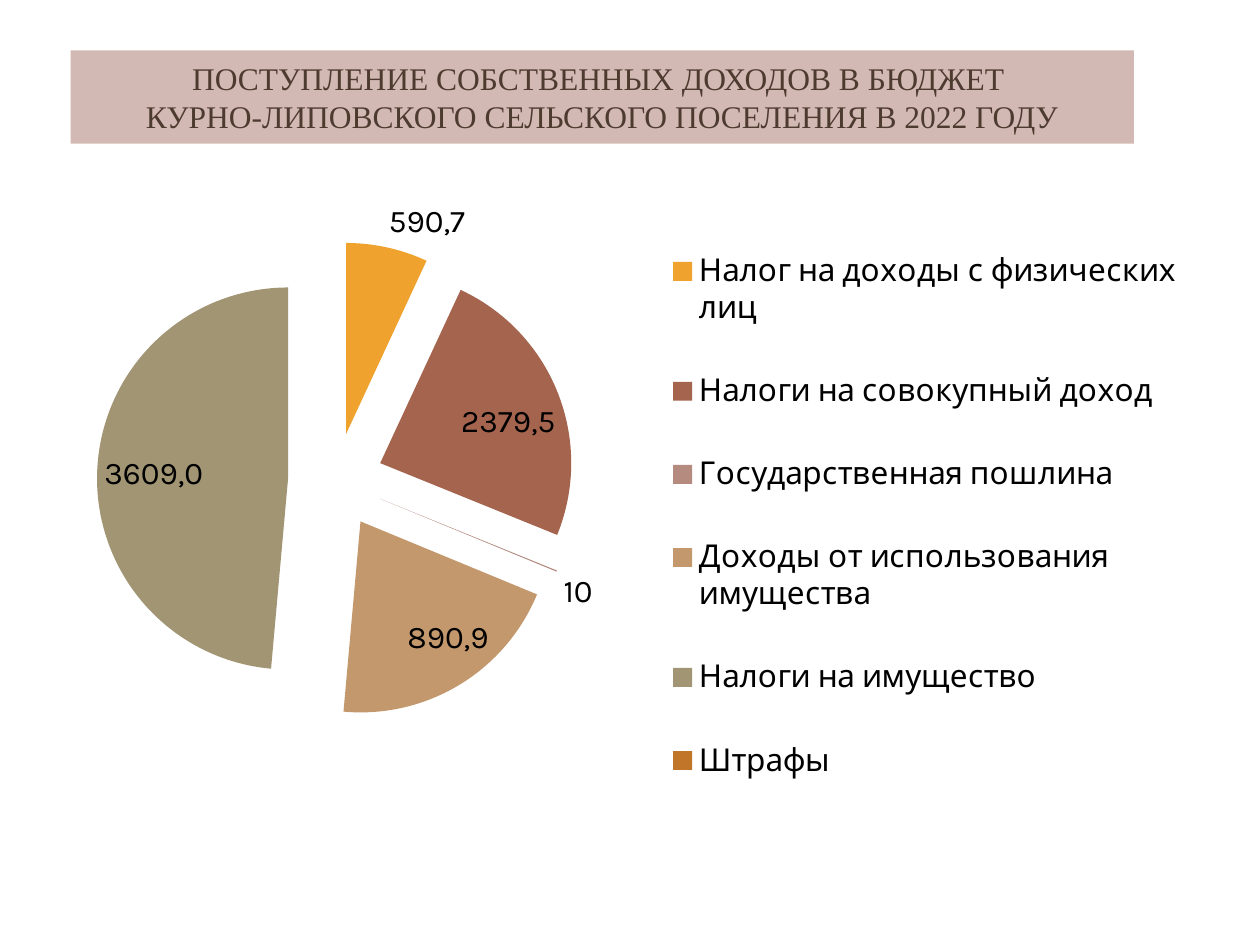
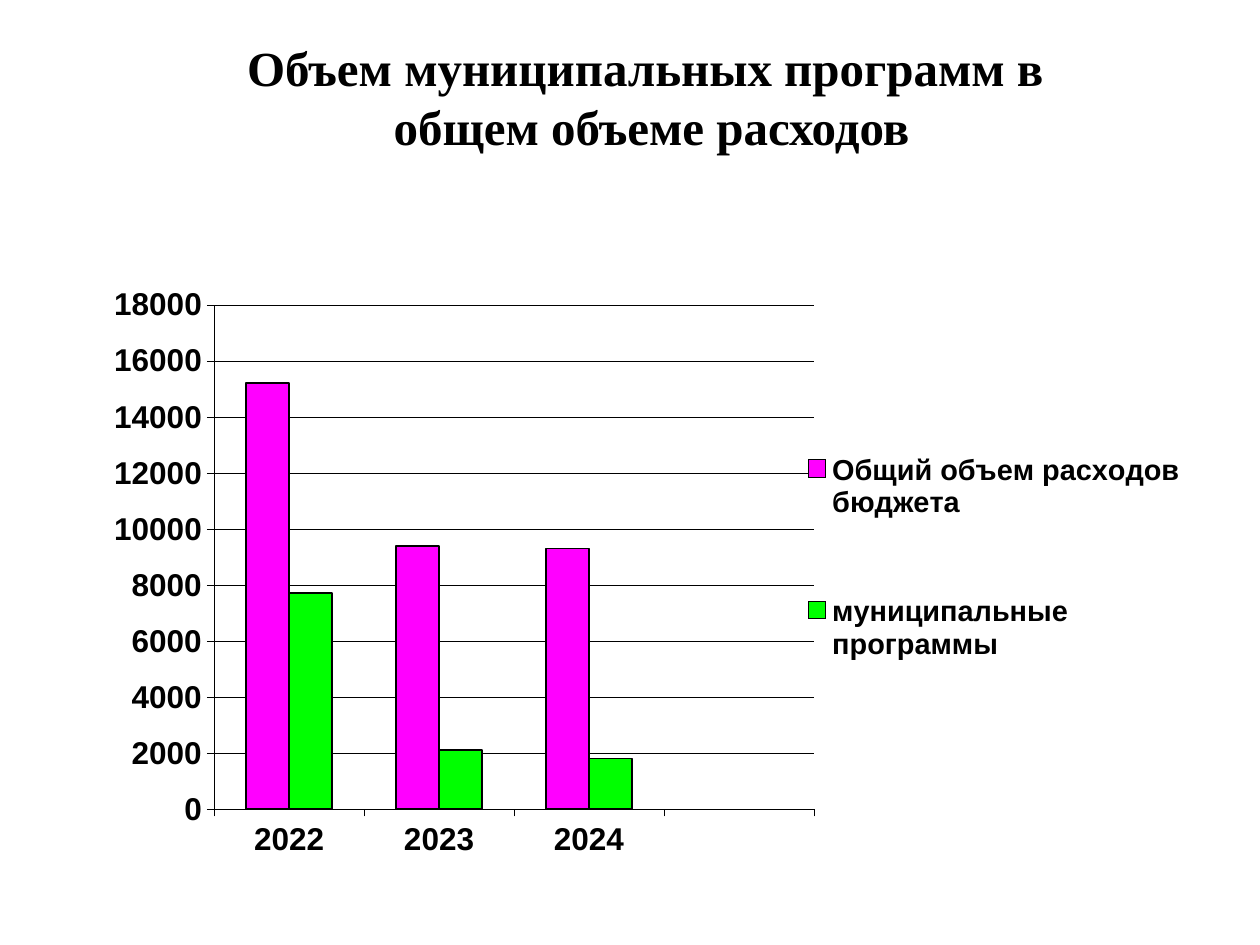
from dataclasses import dataclass

from lxml.etree import SubElement
from pptx import Presentation
from pptx.chart.chart import Chart
from pptx.chart.data import CategoryChartData
from pptx.dml.color import RGBColor
from pptx.enum.chart import (
    XL_CHART_TYPE,
    XL_LABEL_POSITION,
    XL_LEGEND_POSITION,
    XL_TICK_LABEL_POSITION,
    XL_TICK_MARK,
)
from pptx.enum.text import MSO_ANCHOR, MSO_AUTO_SIZE, PP_ALIGN
from pptx.oxml.ns import qn
from pptx.util import Inches, Pt

BLACK = "000000"
TITLE_FONT = "Times New Roman"
TITLE_ONLY = 5


@dataclass
class Area:
    """Left, top, width and height in inches."""
    left: float
    top: float
    width: float
    height: float

    def lengths(self) -> list:
        return [Inches(v) for v in (self.left, self.top, self.width, self.height)]

    def fractions_of(self, whole: "Area") -> dict:
        return {"x": self.left / whole.width, "y": self.top / whole.height,
                "w": self.width / whole.width, "h": self.height / whole.height}


@dataclass
class Tax:
    name: str
    amount: float
    hue: str
    label: str = ""


@dataclass
class Expense:
    name: str
    amounts: tuple
    hue: str


# Slide content
TAXES = [
    Tax("Налог на доходы с физических лиц", 480, "F0A22E", "590,7"),
    Tax("Налоги на совокупный доход", 1680, "A5644E", "2379,5"),
    Tax("Государственная пошлина ", 7, "B58B80", "10"),
    Tax("Доходы от использования имущества", 1400, "C3986D", "890,9"),
    Tax("Налоги на имущество", 3370, "A19574", "3609,0"),
    Tax("Штрафы", 0, "C17529"),
]
YEARS = ["2022", "2023", "2024", ""]
EXPENSES = [
    Expense("Общий объем расходов бюджета", (15200, 9400, 9300, None), "FF00FF"),
    Expense("муниципальные программы", (7700, 2100, 1800, None), "00FF00"),
]


# Shared formatting
def color(value: str) -> RGBColor:
    return RGBColor.from_string(value)


def set_font(font, name: str, size: float, hue: str = BLACK, bold: bool = False) -> None:
    font.name, font.size, font.bold = name, Pt(size), bold
    font.color.rgb = color(hue)


def set_line(line, width: float) -> None:
    line.color.rgb = color(BLACK)
    line.width = Pt(width)


def write_text(frame, text: str, *, font: str, size: float, hue: str = BLACK,
               bold: bool = False, align=PP_ALIGN.CENTER) -> None:
    """Write text; a newline starts a paragraph, a vertical tab breaks a line."""
    frame.text = text
    for para in frame.paragraphs:
        para.alignment = align
        for span in para.runs:
            set_font(span.font, font, size, hue, bold)


def add_titled_page(deck, text: str, area: Area, *, anchor, fill: str = "", **style):
    page = deck.slides.add_slide(deck.slide_layouts[TITLE_ONLY])
    box = page.shapes.title
    box.left, box.top, box.width, box.height = area.lengths()
    if fill:
        box.fill.solid()
        box.fill.fore_color.rgb = color(fill)
    frame = box.text_frame
    frame.word_wrap = True
    frame.auto_size = MSO_AUTO_SIZE.NONE
    frame.vertical_anchor = anchor
    write_text(frame, text, font=TITLE_FONT, **style)
    return page


# Shared chart parts
def set_layout(chart: Chart, part: str, fractions: dict) -> None:
    """Place the plot area or the legend inside the chart."""
    holder = chart.element.xpath(f".//c:{part}")[0]
    for previous in holder.findall(qn("c:layout")):
        holder.remove(previous)
    layout = SubElement(holder, qn("c:layout"))
    manual = SubElement(layout, qn("c:manualLayout"))
    settings = {"xMode": "edge", "yMode": "edge", **fractions}
    if part == "plotArea":
        settings = {"layoutTarget": "inner", **settings}
    for tag, value in settings.items():
        SubElement(manual, qn(f"c:{tag}")).set("val", str(value))
    holder.insert(1 if part == "legend" else 0, layout)


def add_chart(page, kind, data: CategoryChartData, area: Area, plot: Area,
              legend: Area, font: str, bold: bool = False) -> Chart:
    """Add a chart; plot and legend are measured from its top left corner."""
    chart = page.shapes.add_chart(kind, *area.lengths(), data).chart
    chart.has_title = False
    set_font(chart.font, font, 18, bold=bold)
    chart.has_legend = True
    chart.legend.position = XL_LEGEND_POSITION.RIGHT
    chart.legend.include_in_layout = False
    set_layout(chart, "plotArea", plot.fractions_of(area))
    set_layout(chart, "legend", legend.fractions_of(area))
    return chart


# Income slide: exploded pie
def explode(chart: Chart, percent: int) -> None:
    pie_series = chart.element.xpath(".//c:ser")[0]
    explosion = SubElement(pie_series, qn("c:explosion"))
    explosion.set("val", str(percent))
    pie_series.find(qn("c:dPt")).addprevious(explosion)


def drop_label(chart: Chart, index: int) -> None:
    """Switch off the label of the point that follows the labelled ones."""
    last_label = chart.element.xpath(".//c:ser/c:dLbls/c:dLbl")[-1]
    label = SubElement(last_label.getparent(), qn("c:dLbl"))
    SubElement(label, qn("c:idx")).set("val", str(index))
    SubElement(label, qn("c:delete")).set("val", "1")
    last_label.addnext(label)


def build_income(deck) -> None:
    page = add_titled_page(
        deck,
        "ПОСТУПЛЕНИЕ СОБСТВЕННЫХ ДОХОДОВ В БЮДЖЕТ \v"
        "КУРНО-ЛИПОВСКОГО СЕЛЬСКОГО ПОСЕЛЕНИЯ В 2022 ГОДУ",
        Area(0.56, 0.4, 8.44, 0.74),
        anchor=MSO_ANCHOR.MIDDLE, fill="D3B9B3", size=18, hue="4E3B30",
    )
    data = CategoryChartData()
    data.categories = [tax.name for tax in TAXES]
    data.add_series("Series 1", [tax.amount for tax in TAXES])
    chart = add_chart(page, XL_CHART_TYPE.PIE, data, Area(0.33, 1.14, 9.24, 5.92),
                      Area(0.44, 0.78, 3.79, 3.79), Area(4.93, 0.5, 4.16, 4.91), "Karla")
    chart.plots[0].vary_by_categories = True
    series = chart.plots[0].series[0]
    labels = series.data_labels
    labels.show_value = True
    labels.position = XL_LABEL_POSITION.BEST_FIT
    set_font(labels.font, "Karla", 18)
    for index, tax in enumerate(TAXES):
        point = series.points[index]
        point.format.fill.solid()
        point.format.fill.fore_color.rgb = color(tax.hue)
        if tax.label:
            write_text(point.data_label.text_frame, tax.label, font="Karla", size=18)
            point.data_label.position = XL_LABEL_POSITION.BEST_FIT
        else:
            drop_label(chart, index)
    explode(chart, 25)


# Programme slide: clustered columns
def build_programmes(deck) -> None:
    page = add_titled_page(
        deck, "Объем муниципальных программ в \nобщем объеме расходов",
        Area(0.67, 0.25, 9, 1.25), anchor=MSO_ANCHOR.TOP, size=28, bold=True,
    )
    data = CategoryChartData()
    data.categories = YEARS
    for expense in EXPENSES:
        data.add_series(expense.name, expense.amounts)
    chart = add_chart(page, XL_CHART_TYPE.COLUMN_CLUSTERED, data,
                      Area(0.64, 2.19, 8.87, 4.84), Area(1.06, 0.23, 4.76, 4),
                      Area(5.7, 0.81, 3.1, 2.85), "Arial", bold=True)
    set_font(chart.legend.font, "Arial", 16.5, bold=True)

    plot = chart.plots[0]
    plot.vary_by_categories = False
    plot.gap_width, plot.overlap = 150, 0
    for series, expense in zip(plot.series, EXPENSES):
        series.format.fill.solid()
        series.format.fill.fore_color.rgb = color(expense.hue)
        set_line(series.format.line, 1)

    for axis in (chart.category_axis, chart.value_axis):
        axis.major_tick_mark = XL_TICK_MARK.OUTSIDE
        axis.minor_tick_mark = XL_TICK_MARK.NONE
        set_font(axis.tick_labels.font, "Arial", 18, bold=True)
        set_line(axis.format.line, 0.25)
    chart.category_axis.tick_label_position = XL_TICK_LABEL_POSITION.LOW
    scale = chart.value_axis
    scale.minimum_scale, scale.maximum_scale, scale.major_unit = 0, 18000, 2000
    scale.has_major_gridlines = True
    set_line(scale.major_gridlines.format.line, 0.25)


def main() -> None:
    deck = Presentation()
    deck.slide_width, deck.slide_height = Inches(10), Inches(7.5)
    build_income(deck)
    build_programmes(deck)
    deck.save("out.pptx")


if __name__ == "__main__":
    main()
